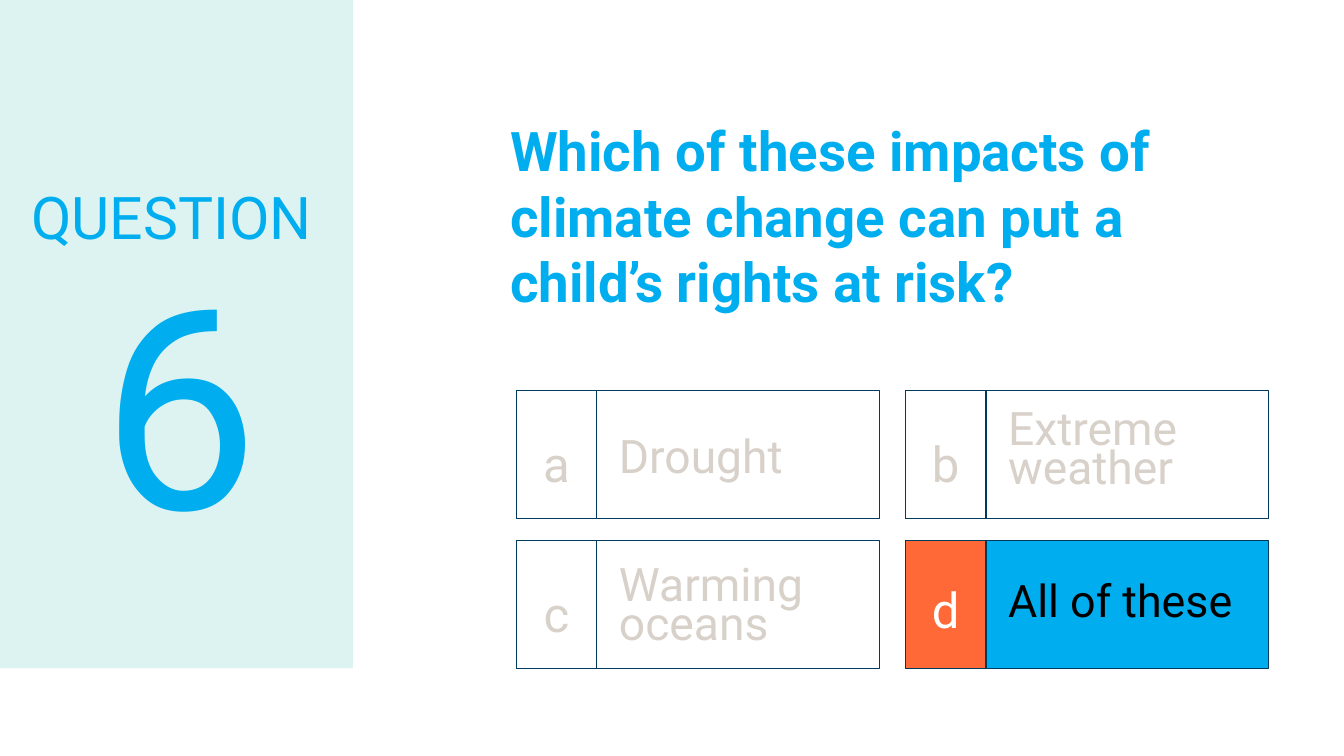
from dataclasses import dataclass

from lxml import etree
from pptx import Presentation
from pptx.dml.color import RGBColor
from pptx.enum.shapes import MSO_SHAPE
from pptx.enum.text import MSO_ANCHOR, MSO_AUTO_SIZE, PP_ALIGN
from pptx.oxml.ns import qn
from pptx.util import Inches, Pt

RECT = MSO_SHAPE.RECTANGLE
TOP, MIDDLE = MSO_ANCHOR.TOP, MSO_ANCHOR.MIDDLE
FIXED, GROW = MSO_AUTO_SIZE.NONE, MSO_AUTO_SIZE.SHAPE_TO_FIT_TEXT
LEFT, CENTER = PP_ALIGN.LEFT, PP_ALIGN.CENTER


@dataclass(frozen=True)
class Theme:
    font: str = "Roboto"
    blue: str = "00AEEF"
    navy: str = "003B5E"
    mint: str = "DDF3F1"
    coral: str = "FF6937"
    muted: str = "D8D1CA"
    white: str = "FFFFFF"
    black: str = "000000"
    ask: int = 39
    head: int = 42
    digit: int = 200
    key: int = 35
    answer: int = 33
    right: int = 32


def put(target, values):
    for name, value in values.items():
        setattr(target, name, value)


def place(shape, box):
    names = ("left", "top", "width", "height")
    put(shape, dict(zip(names, map(Inches, box))))


class Page:
    def __init__(self, slide, theme):
        self.slide = slide
        self.theme = theme

    def style(self, shape, text, size, color, pad, bold=False, align=LEFT,
              space=1.0, anchor=TOP, fit=FIXED):
        frame = shape.text_frame
        frame.text = text
        inset = Inches(pad)
        put(frame, {"word_wrap": True, "auto_size": fit,
                    "vertical_anchor": anchor,
                    "margin_left": inset, "margin_right": inset,
                    "margin_top": inset, "margin_bottom": inset})
        para = frame.paragraphs[0]
        put(para, {"alignment": align, "line_spacing": space,
                   "space_before": Pt(0)})
        font = para.runs[0].font
        put(font, {"name": self.theme.font, "size": Pt(size), "bold": bold})
        font.color.rgb = RGBColor.from_string(color)

    def rect(self, box, fill=None, line=None):
        shape = self.slide.shapes.add_shape(RECT, *map(Inches, box))
        shape.shadow.inherit = False
        if fill:
            shape.fill.solid()
            shape.fill.fore_color.rgb = RGBColor.from_string(fill)
        else:
            shape.fill.background()
        if line:
            shape.line.color.rgb = RGBColor.from_string(line)
            shape.line.width = Pt(0.75)
        else:
            shape.line.fill.background()

    def label(self, box, *args, **look):
        shape = self.slide.shapes.add_textbox(*map(Inches, box))
        self.style(shape, *args, **look)

    def title(self, box, *args, **look):
        """Fill the title and bring it in front of the side panel."""
        shape = self.slide.shapes.title
        place(shape, box)
        self.style(shape, *args, **look)
        shape.element.getparent().append(shape.element)

    def body(self, box, *args, **look):
        """Fill the body as plain text, without its bullet."""
        shape = self.slide.placeholders[1]
        place(shape, box)
        self.style(shape, *args, **look)
        props = shape.element.find(".//" + qn("a:pPr"))
        props.set("marL", "0")
        props.set("indent", "0")
        etree.SubElement(props, qn("a:buNone"))

    def option(self, col, row, key, text, drop, tall, key_drop=0.24,
               right=False):
        """Draw one answer cell; drops are text offsets from its top."""
        t = self.theme
        x, y = 5.12 + 3.86 * col, 3.87 + 1.49 * row
        self.rect((x, y, 3.6, 1.27), t.blue if right else None, t.navy)
        self.rect((x, y, 0.8, 1.27), t.coral if right else None, t.navy)
        self.label((x, y + key_drop, 0.8, 0.79), key, t.key,
                   t.white if right else t.muted, 0.1,
                   align=CENTER, space=1.15, fit=GROW)
        self.label((x + 0.92, y + drop, 2.61, tall), text,
                   t.right if right else t.answer,
                   t.black if right else t.muted, 0.1, space=0.7, fit=GROW)


def main():
    deck = Presentation()
    put(deck, {"slide_width": Inches(13.33), "slide_height": Inches(7.5)})
    t = Theme()
    page = Page(deck.slides.add_slide(deck.slide_layouts[1]), t)

    page.body((4.98, 1.08, 7.82, 2.37),
              "Which of these impacts of climate change can put a "
              "child’s rights at risk?", t.ask, t.blue, 0.08, bold=True)

    page.option(0, 0, "a", "Drought", 0.42, 0.59)
    page.option(1, 0, "b", "Extreme weather", 0.14, 0.98)
    page.option(0, 1, "c", "Warming oceans", 0.2, 0.98)
    page.option(1, 1, "d", "All of these", 0.37, 0.58, key_drop=0.2,
                right=True)

    page.rect((0, 0, 3.5, 6.63), t.mint)
    side = {"space": 0.9, "anchor": MIDDLE}
    page.title((0.26, 1.68, 3.34, 1.01), "QUESTION", t.head, t.blue, 0.05,
               **side)
    page.label((0.26, 2.59, 3.05, 3.12), "6", t.digit, t.blue, 0.05,
               align=CENTER, **side)
    deck.save("out.pptx")


if __name__ == "__main__":
    main()
